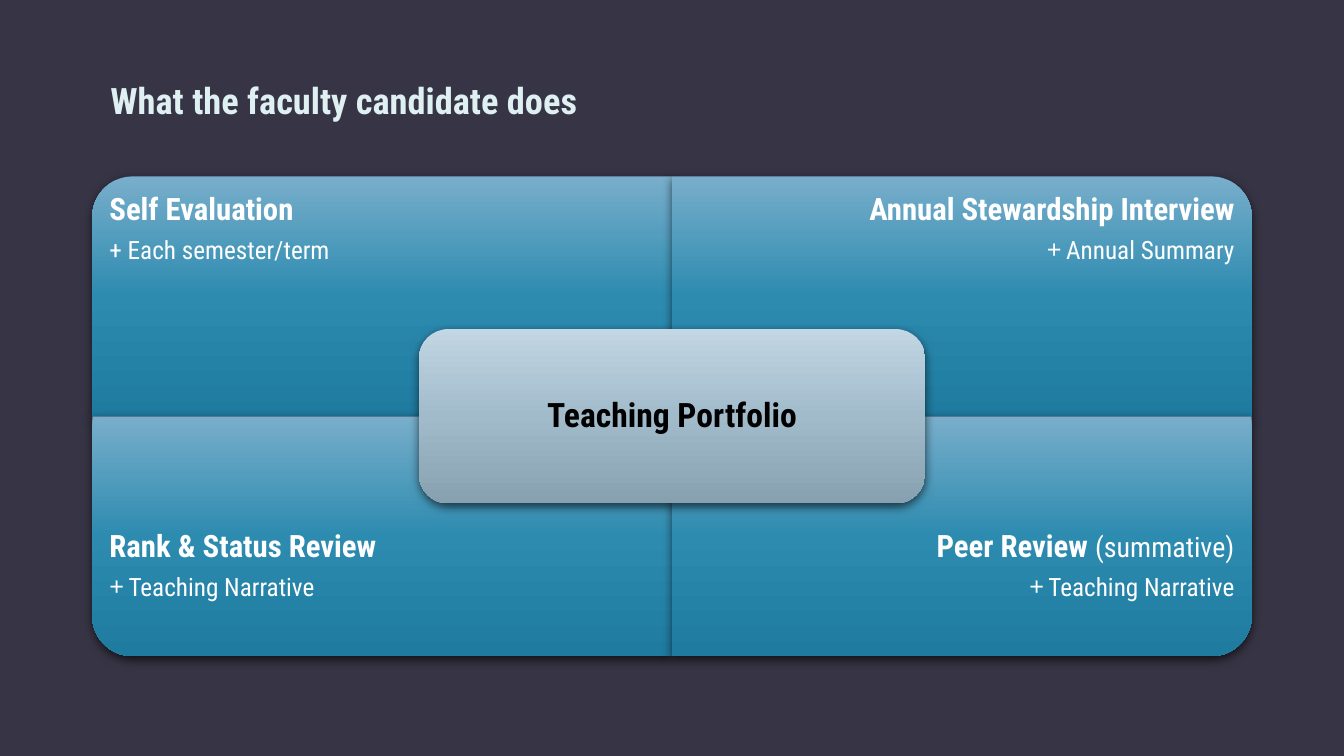
from lxml.etree import SubElement
from pptx import Presentation
from pptx.dml.color import RGBColor
from pptx.enum.text import MSO_ANCHOR, MSO_AUTO_SIZE, PP_ALIGN
from pptx.oxml.ns import qn
from pptx.util import Inches, Pt

COLORS = {
    "background": "373545",
    "title": "DEF0F2",
    "light_text": "FFFFFF",
    "dark_text": "000000",
    "shadow": "000000",
}
QUADRANT_GRADIENT = ["78AECB", "2D8BB0", "1F7BA0"]
CENTER_GRADIENT = ["C2D6E3", "A1BBCB", "88A1B1"]
FONT, BULLET_FONT = "Roboto Condensed", "Arial"

PAGE_WIDTH, PAGE_HEIGHT = 13.33, 7.5
WIDTH, HEIGHT, TOP = 5.75, 2.38, 1.75
LEFT = PAGE_WIDTH / 2 - WIDTH
CENTER_WIDTH, CENTER_HEIGHT = 5.02, 1.73
CORNER_RADIUS, CENTER_RADIUS = 0.4, 0.29
CURVE_PULL = 0.45
INSET, INNER_INSET = 0.17, 0.77

# Row, column, heading spans (text, size, bold), detail, whether "+" is a bullet
QUADRANTS = [
    (0, 0, [("Self Evaluation", 22, True)], "+ Each semester/term", False),
    (0, 1, [("Annual Stewardship Interview", 22, True)], "Annual Summary", True),
    (1, 0, [("Rank & Status Review", 22, True)], "Teaching Narrative", True),
    (1, 1, [("Peer Review ", 22, True), ("(summative)", 20, False)],
     "Teaching Narrative", True),
]


def rgb(name):
    return RGBColor.from_string(COLORS[name])


def set_values(target, values):
    for name, value in values.items():
        setattr(target, name, value)


def outline_points(left, top, width, height, radius, rounded):
    """Points clockwise, and the indexes at which a corner curve ends its controls."""
    points, curves = [], []
    for row, column in [(0, 0), (0, 1), (1, 1), (1, 0)]:
        x, y = left + column * width, top + row * height
        if (row, column) not in rounded:
            points.append((x, y))
            continue
        inward_x, inward_y = radius * (1 - 2 * column), radius * (1 - 2 * row)
        along_y = [(x, y + inward_y), (x, y + inward_y * CURVE_PULL)]
        along_x = [(x + inward_x * CURVE_PULL, y), (x + inward_x, y)]
        corner = along_y + along_x
        if row != column:
            corner.reverse()
        curves.append(len(points) + 1)
        points.extend(corner)
    return [(Inches(x), Inches(y)) for x, y in points], curves


def bend_corners(panel, curves):
    """Turn the three segments from each index on into one cubic curve."""
    outline = next(panel._element.iter(qn("a:path")))
    segments = list(outline)
    for start in curves:
        curve = SubElement(outline, qn("a:cubicBezTo"))
        outline.replace(segments[start], curve)
        for segment in segments[start:start + 3]:
            curve.append(segment[0])
        for segment in segments[start + 1:start + 3]:
            outline.remove(segment)


def paint_gradient(shape, stops):
    """Fill from top to bottom with evenly spaced stops."""
    shape.fill.gradient()
    shape.fill.gradient_angle = 270
    stop_list = next(shape._element.spPr.iter(qn("a:gsLst")))
    for stop in list(stop_list):
        stop_list.remove(stop)
    for index, color in enumerate(stops):
        position = index * 100000 // (len(stops) - 1)
        stop = SubElement(stop_list, qn("a:gs"), pos=str(position))
        SubElement(stop, qn("a:srgbClr"), val=color)


def add_shadow(shape):
    shape.shadow.inherit = False
    effects = shape._element.spPr.find(qn("a:effectLst"))
    shadow = SubElement(effects, qn("a:outerShdw"), blurRad=str(Pt(7)),
                        dist=str(Pt(2.2)), dir="5400000", algn="ctr", rotWithShape="0")
    color = SubElement(shadow, qn("a:srgbClr"), val=COLORS["shadow"])
    SubElement(color, qn("a:alpha"), val="63000")


def add_panel(page, bounds, radius, rounded, stops):
    points, curves = outline_points(*bounds, radius, rounded)
    builder = page.shapes.build_freeform(*points[0])
    builder.add_line_segments(points[1:], close=True)
    panel = builder.convert_to_shape()
    bend_corners(panel, curves)
    paint_gradient(panel, stops)
    panel.line.fill.background()
    add_shadow(panel)
    return panel


def format_frame(frame, left, top, right, bottom, anchor):
    set_values(frame, {
        "word_wrap": True,
        "vertical_anchor": anchor,
        "margin_left": Inches(left),
        "margin_top": Inches(top),
        "margin_right": Inches(right),
        "margin_bottom": Inches(bottom),
    })


def write_para(para, spans, color, align, space_after=0, line_spacing=0.9):
    set_values(para, {"alignment": align, "line_spacing": line_spacing,
                      "space_after": Pt(space_after)})
    for text, size, bold in spans:
        span = para.add_run()
        span.text = text
        set_values(span.font, {"name": FONT, "size": Pt(size), "bold": bold})
        span.font.color.rgb = rgb(color)


def add_plus_bullet(para):
    para.level = 1
    properties = para._p.get_or_add_pPr()
    properties.set("marL", str(Inches(0.19)))
    properties.set("indent", str(-Inches(0.19)))
    SubElement(properties, qn("a:buFont"), typeface=BULLET_FONT)
    SubElement(properties, qn("a:buChar"), char="+")


def add_quadrant(page, row, column, heading, detail, bulleted):
    bounds = (LEFT + column * WIDTH, TOP + row * HEIGHT, WIDTH, HEIGHT)
    panel = add_panel(page, bounds, CORNER_RADIUS, [(row, column)], QUADRANT_GRADIENT)
    frame = panel.text_frame
    top, bottom = (INNER_INSET, INSET) if row else (INSET, INNER_INSET)
    anchor = MSO_ANCHOR.MIDDLE if row else MSO_ANCHOR.TOP
    format_frame(frame, INSET, top, INSET, bottom, anchor)
    align = PP_ALIGN.RIGHT if column else PP_ALIGN.LEFT
    write_para(frame.paragraphs[0], heading, "light_text", align, 7.7)
    para = frame.add_paragraph()
    write_para(para, [(detail, 18, False)], "light_text", align, 2.7)
    if bulleted:
        add_plus_bullet(para)


def add_center(page):
    corners = [(0, 0), (0, 1), (1, 0), (1, 1)]
    bounds = ((PAGE_WIDTH - CENTER_WIDTH) / 2, TOP + HEIGHT - CENTER_HEIGHT / 2,
              CENTER_WIDTH, CENTER_HEIGHT)
    panel = add_panel(page, bounds, CENTER_RADIUS, corners, CENTER_GRADIENT)
    format_frame(panel.text_frame, 0.18, 0.18, 0.18, 0.18, MSO_ANCHOR.MIDDLE)
    write_para(panel.text_frame.paragraphs[0], [("Teaching Portfolio", 24, True)],
               "dark_text", PP_ALIGN.CENTER)


def add_title(page):
    box = page.shapes.add_textbox(Inches(LEFT), Inches(0.73), Inches(8.82), Inches(0.54))
    format_frame(box.text_frame, 0.18, 0.05, 0.1, 0.05, MSO_ANCHOR.TOP)
    box.text_frame.auto_size = MSO_AUTO_SIZE.SHAPE_TO_FIT_TEXT
    write_para(box.text_frame.paragraphs[0],
               [("What the faculty candidate does", 26, True)],
               "title", PP_ALIGN.LEFT, line_spacing=1.0)


def main():
    deck = Presentation()
    deck.slide_width, deck.slide_height = Inches(PAGE_WIDTH), Inches(PAGE_HEIGHT)
    page = deck.slides.add_slide(deck.slide_layouts[6])
    page.background.fill.solid()
    page.background.fill.fore_color.rgb = rgb("background")
    for quadrant in QUADRANTS:
        add_quadrant(page, *quadrant)
    add_center(page)
    add_title(page)
    deck.save("out.pptx")


if __name__ == "__main__":
    main()
